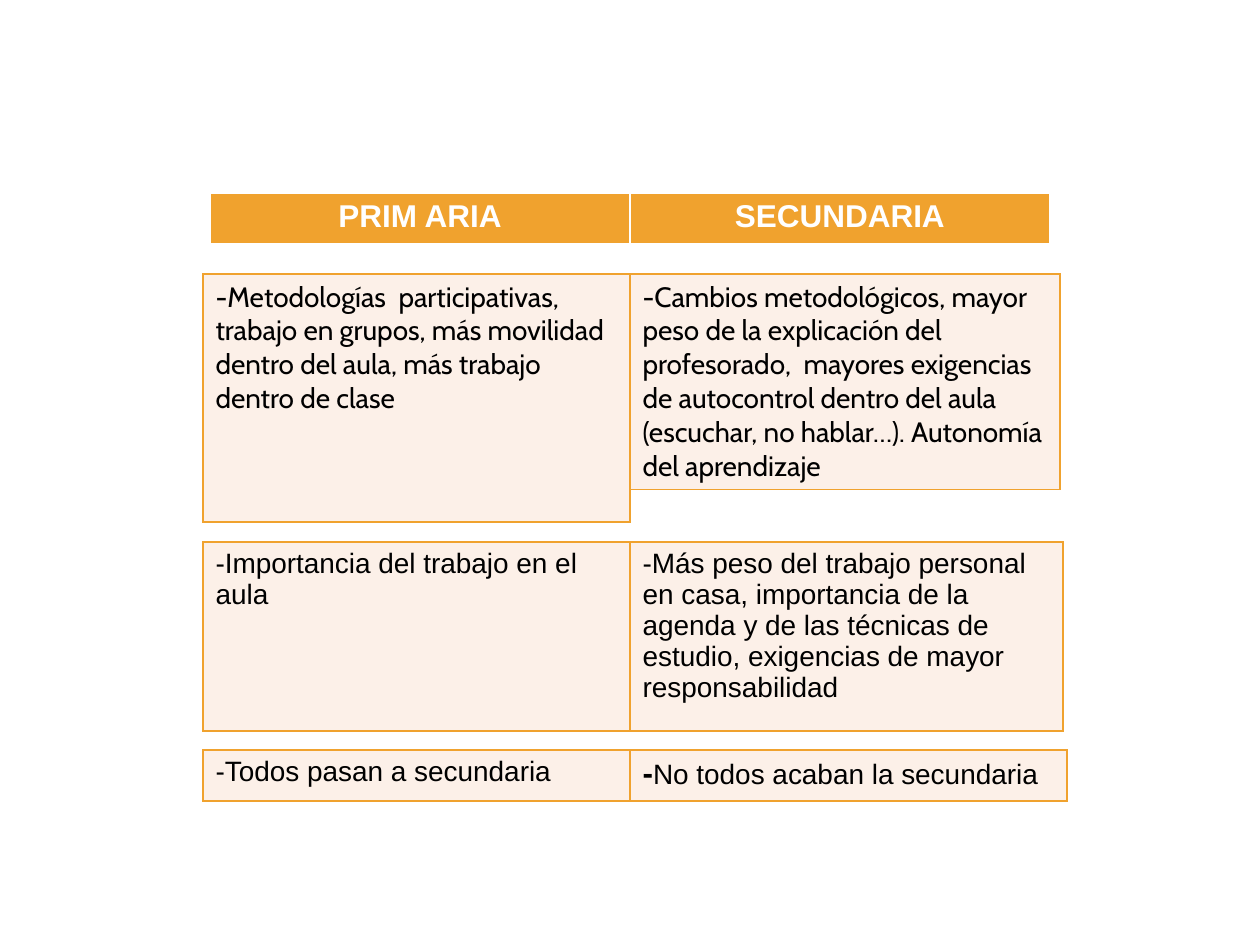
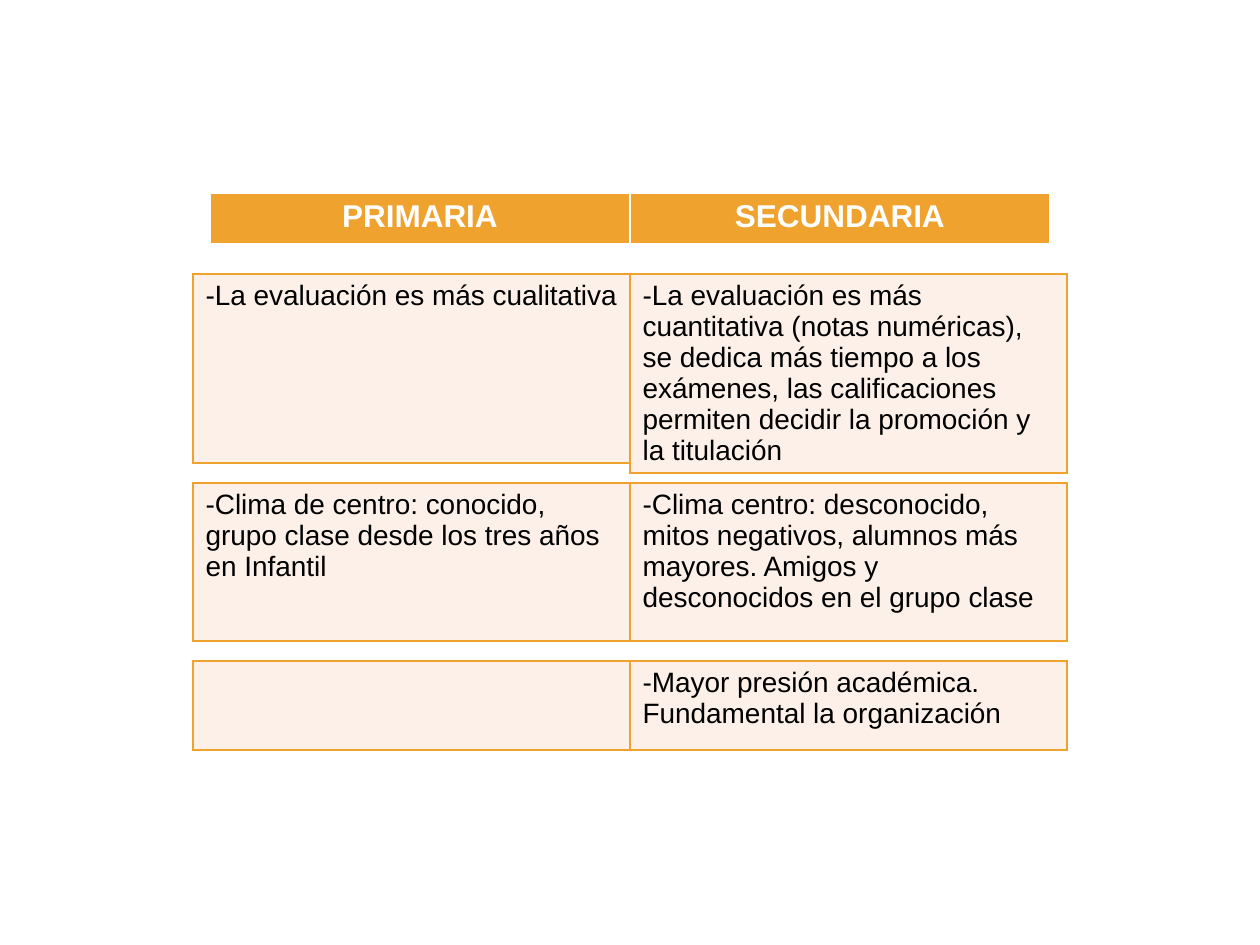
from lxml import etree
from pptx import Presentation
from pptx.dml.color import RGBColor
from pptx.enum import text
from pptx.oxml import ns
from pptx.util import Pt

PX = 914400 // 126
SLIDE_W, SLIDE_H = 1260, 945
MIDDLE = SLIDE_W // 2
ORANGE = RGBColor(0xF0, 0xA2, 0x2E)
CREAM = RGBColor(0xFC, 0xF0, 0xE8)
WHITE = RGBColor(0xFF, 0xFF, 0xFF)
BLACK = RGBColor(0, 0, 0)
HEADER_BOX = (210, 193, 840, 52)


def px(n):
    return round(n * 914400 / 126)


def add_table(slide, box, columns):
    table = slide.shapes.add_table(1, columns, *map(px, box)).table
    table.first_row = table.horz_banding = False
    return table


def set_borders(cell, color, bottom_pt=1):
    tc_pr = cell._tc.get_or_add_tcPr()
    for i, (side, width) in enumerate(
        [("lnL", 1), ("lnR", 1), ("lnT", 1), ("lnB", bottom_pt)]
    ):
        ln = etree.Element(ns.qn(f"a:{side}"), w=str(Pt(width)))
        fill = etree.SubElement(ln, ns.qn("a:solidFill"))
        etree.SubElement(fill, ns.qn("a:srgbClr"), val=str(color))
        tc_pr.insert(i, ln)


def fill_cell(cell, color):
    cell.fill.solid()
    cell.fill.fore_color.rgb = color


def add_run(p, words, size, color, bold=False, font="Arial"):
    r = p.add_run()
    r.text = words
    r.font.size = Pt(size)
    r.font.bold = bold
    r.font.name = font
    r.font.color.rgb = color


def add_header(slide, box, titles):
    table = add_table(slide, box, len(titles))
    for cell, title in zip(table.rows[0].cells, titles):
        fill_cell(cell, ORANGE)
        set_borders(cell, WHITE, bottom_pt=3)
        p = cell.text_frame.paragraphs[0]
        p.alignment = text.PP_ALIGN.CENTER
        add_run(p, title, 18, WHITE, bold=True)


def add_note(slide, box, words, font, bold_dash):
    cell = add_table(slide, box, 1).cell(0, 0)
    fill_cell(cell, CREAM)
    set_borders(cell, ORANGE)
    p = cell.text_frame.paragraphs[0]
    if bold_dash:
        add_run(p, "-", 18, BLACK, bold=True)
    if words:
        add_run(p, words, 16, BLACK, font=font)


def add_pair(slide, top, left, right, font="Arial", bold_dash=False):
    width, height, words = left
    add_note(slide, (MIDDLE - width, top, width, height), words, font, False)
    width, height, words = right
    add_note(slide, (MIDDLE, top, width, height), words, font, bold_dash)


def add_comparison(prs, titles, pairs):
    slide = prs.slides.add_slide(prs.slide_layouts[6])
    add_header(slide, HEADER_BOX, titles)
    for pair in pairs:
        add_pair(slide, *pair)


METHODS = [
    (274,
     (427, 248, "-Metodologías  participativas, trabajo en grupos, más movilidad "
                "dentro del aula, más trabajo dentro de clase"),
     (430, 215, "-Cambios metodológicos, mayor peso de la explicación del "
                "profesorado,  mayores exigencias de autocontrol dentro del aula "
                "(escuchar, no hablar…). Autonomía del aprendizaje"),
     "Cabin"),
    (542,
     (427, 189, "-Importancia del trabajo en el aula"),
     (433, 189, "-Más peso del trabajo personal en casa, importancia de la agenda "
                "y de las técnicas de estudio, exigencias de mayor responsabilidad")),
    (750,
     (427, 51, "-Todos pasan a secundaria"),
     (437, 51, "No todos acaban la secundaria"),
     "Arial", True),
]

CLIMATE = [
    (274,
     (437, 189, "-La evaluación es más cualitativa"),
     (437, 189, "-La evaluación es más cuantitativa (notas numéricas), se dedica "
                "más tiempo a los exámenes, las calificaciones permiten decidir "
                "la promoción y la titulación")),
    (483,
     (437, 158, "-Clima de centro: conocido, grupo clase desde los tres años "
                "en Infantil"),
     (437, 158, "-Clima centro: desconocido, mitos negativos, alumnos más mayores. "
                "Amigos y desconocidos en el grupo clase")),
    (661,
     (437, 89, ""),
     (437, 89, "-Mayor presión académica. Fundamental la organización")),
]


def main():
    prs = Presentation()
    prs.slide_width, prs.slide_height = px(SLIDE_W), px(SLIDE_H)
    add_comparison(prs, ("PRIM ARIA", "SECUNDARIA"), METHODS)
    add_comparison(prs, ("PRIMARIA", "SECUNDARIA"), CLIMATE)
    prs.save("out.pptx")


if __name__ == "__main__":
    main()
